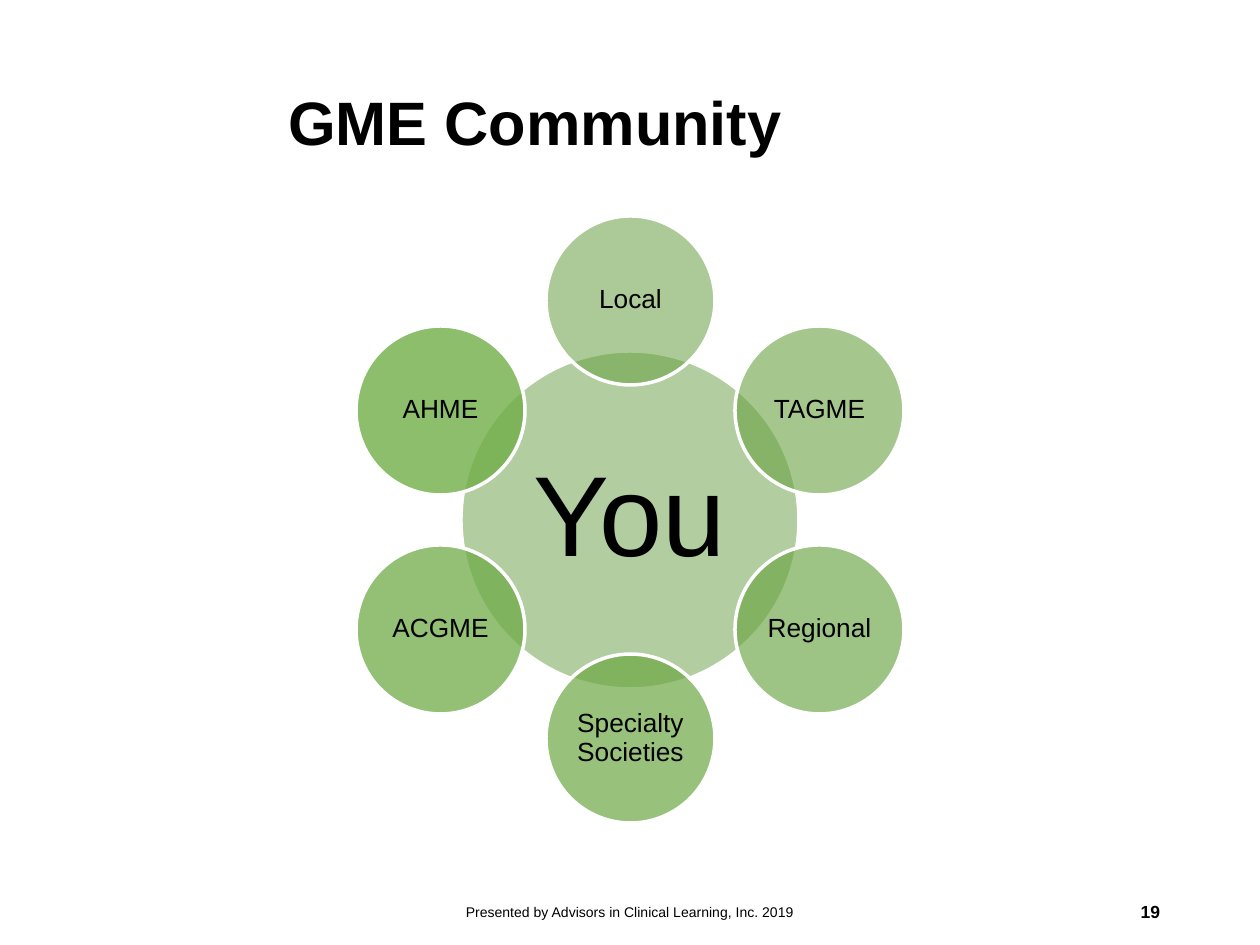
import math
import pptx
import pptx.util
import pptx.dml.color
import pptx.enum.shapes
import pptx.enum.text
import lxml.etree

PX = 914400 // 126
ALIGN = pptx.enum.text.PP_ALIGN
TITLE = ("GME Community", (275, 34, 900, 183))
NOTES = [
    ("19", (890, 887, 283, 50), 10, True, ALIGN.RIGHT),
    ("Presented by Advisors in Clinical Learning, Inc. 2019",
     (417, 887, 426, 50), 8, False, ALIGN.CENTER),
]
MID = (630, 520)
RING = 219
HUB = ("You", "669D40", 50)
NODES = [
    ("Local", "68A042", 55),
    ("TAGME", "69A343", 60),
    ("Regional", "6BA544", 65),
    ("Specialty Societies", "6DA845", 70),
    ("ACGME", "6FAB47", 75),
    ("AHME", "71AE48", 80),
]


def color(code):
    return pptx.dml.color.RGBColor.from_string(code)


def place(box):
    return [n * PX for n in box]


def write(shape, text, size, bold, align, pad, lead=None):
    frame = shape.text_frame
    frame.text = text
    frame.word_wrap = True
    frame.auto_size = pptx.enum.text.MSO_AUTO_SIZE.NONE
    frame.vertical_anchor = pptx.enum.text.MSO_ANCHOR.MIDDLE
    frame.margin_left, frame.margin_top, frame.margin_right, frame.margin_bottom = place(pad)
    para = frame.paragraphs[0]
    para.alignment = align
    para.line_spacing = lead
    font = para.runs[0].font
    font.name = "Arial"
    font.size = pptx.util.Pt(size)
    font.bold = bold
    font.color.rgb = color("000000")


def disc(slide, item, x, y, wide, size, pad):
    text, code, alpha = item
    box = (round(x - wide / 2), round(y - wide / 2), wide, wide)
    shape = slide.shapes.add_shape(pptx.enum.shapes.MSO_SHAPE.OVAL, *place(box))
    shape.shadow.inherit = False
    shape.fill.solid()
    shape.fill.fore_color.rgb = color(code)
    tint = shape.fill._xPr.find(".//" + pptx.oxml.ns.qn("a:srgbClr"))
    lxml.etree.SubElement(tint, pptx.oxml.ns.qn("a:alpha"), val=str(alpha * 1000))
    shape.line.color.rgb = color("FFFFFF")
    shape.line.width = pptx.util.Pt(2)
    write(shape, text, size, False, ALIGN.CENTER, [pad] * 4, 0.9)


def main():
    deck = pptx.Presentation()
    deck.slide_width = pptx.util.Inches(10)
    deck.slide_height = pptx.util.Inches(7.5)
    slide = deck.slides.add_slide(deck.slide_layouts[5])

    text, box = TITLE
    title = slide.shapes.title
    title.left, title.top, title.width, title.height = place(box)
    write(title, text, 35, True, ALIGN.LEFT, [13] * 4, 0.9)

    for text, box, size, bold, align in NOTES:
        note = slide.shapes.add_textbox(*place(box))
        write(note, text, size, bold, align, (13, 6, 13, 6))

    disc(slide, HUB, *MID, 338, 65, 11)
    for i, node in enumerate(NODES):
        turn = math.tau * i / len(NODES)
        x = MID[0] + RING * math.sin(turn)
        y = MID[1] - RING * math.cos(turn)
        disc(slide, node, x, y, 169, 15, 2)

    deck.save("out.pptx")


if __name__ == "__main__":
    main()
